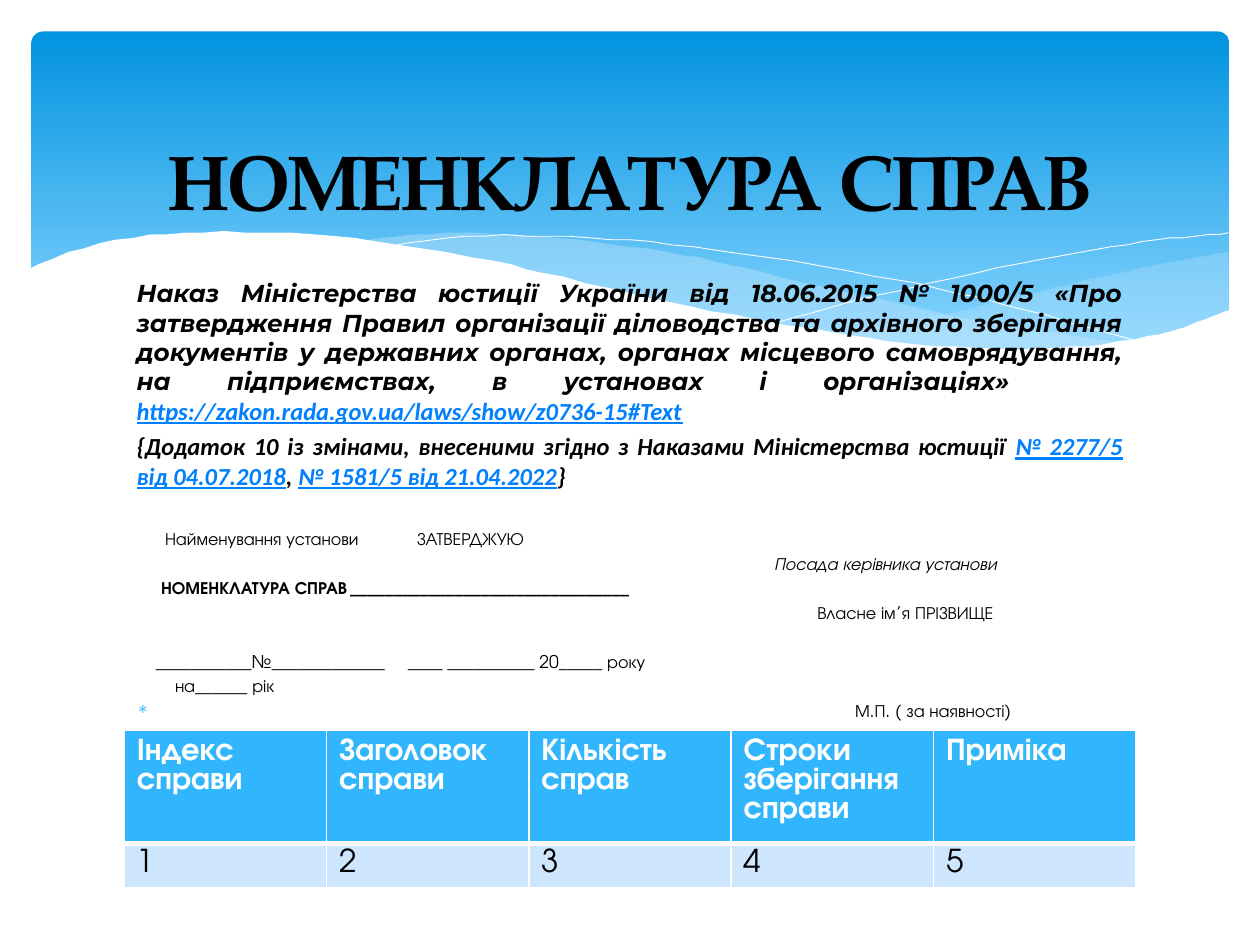
from dataclasses import dataclass

from lxml import etree
from pptx import Presentation
from pptx.dml.color import RGBColor
from pptx.enum import shapes, text
from pptx.oxml import ns
from pptx.util import Pt


@dataclass(frozen=True)
class Theme:
    """Colours, fonts and type sizes of the slide."""
    banner_top: str = "0293E0"
    banner_bottom: str = "83D3FE"
    haze: str = "C6E7FC"
    white: str = "FFFFFF"
    ink: str = "000000"
    link: str = "0080FF"
    accent: str = "31B6FD"
    pale: str = "CEE5FE"
    heading: str = "TeX Gyre Pagella"
    decree: str = "Montserrat"
    reference: str = "Calibri"
    plain: str = "TeX Gyre Adventor"
    title_size: int = 44
    table_size: int = 18
    decree_size: int = 14
    form_size: int = 10


THEME = Theme()

CREST = [(0, 21), (32, 9), (69, 2), (111, 0), (163, 1.5), (211, 7), (265, 16.5), (305, 26),
         (364, 39.5), (418, 50.5), (479, 60.5), (519, 65), (566, 67), (605, 65), (639, 60),
         (667, 52), (687, 44.5)]
RIGHT_HAZE = [
    [(459, 58), (508, 50), (563, 38), (603, 28), (646.5, 18.7), (686, 11.5)],
    [(686, 45.4), (662, 54), (635, 61), (605, 65.5), (569.5, 67.7), (537, 67), (501, 63.4), (459, 58)]]
MIDDLE_HAZE = [
    [(189, 5), (220, 2), (257, 0.7), (302, 3.6), (353.5, 10), (393, 17), (436, 27.5), (492, 40),
     (541.5, 50.5), (586, 58), (626, 64)],
    [(626, 64), (600.5, 67), (564.5, 67.7), (531, 67), (494, 63.4), (451.5, 57.6), (404, 49),
     (365, 40), (307, 27.4), (259, 16.6), (216, 8.6), (189, 5)]]
LONG_STRAND = [(206, 8), (231, 4.3), (272, 2), (321, 3.6), (367, 7), (421, 14.4), (484, 25),
               (531, 35), (582, 48), (636.5, 63.4)]
RISING_STRAND = [(425, 52.6), (484, 36.7), (542, 23), (585, 14.4), (628, 7), (659, 3), (685.5, 0.7)]

DECREE = [
    [("Наказ Міністерства юстиції України від 18.06.2015 № 1000/5 «Про затвердження Правил "
      "організації діловодства та архівного зберігання документів у державних органах, органах "
      "місцевого самоврядування, на підприємствах, в установах і організаціях»   ",
      THEME.decree, False),
     ("https://zakon.rada.gov.ua/laws/show/z0736-15#Text", THEME.reference, True)],
    [("{Додаток 10 із змінами, внесеними згідно з Наказами Міністерства юстиції ",
      THEME.reference, False),
     ("№ 2277/5 від 04.07.2018", THEME.reference, True),
     (", ", THEME.reference, False),
     ("№ 1581/5 від 21.04.2022", THEME.reference, True),
     ("}", THEME.reference, False)]]

FORM_ROWS = [
    (0, [(16.3, "Найменування установи"), (364.3, "ЗАТВЕРДЖУЮ")], ""),
    (2, [(364.3, "Посада керівника установи")], "italic"),
    (2, [(14, "НОМЕНКЛАТУРА СПРАВ"), (396.3, "_" * 32)], "bold"),
    (2, [(389, "Власне ім’я ПРІЗВИЩЕ")], ""),
    (16, [(11, "___________№_____________"), (401, "____ __________ 20_____ року")], ""),
    (2, [(22, "на______ рік")], ""),
    (2, [(410.6, "М.П. ( за наявності)")], "bullet")]

REGISTER = [["Індекс справи", "Заголовок справи", "Кількість справ", "Строки зберігання справи", "Приміка"],
            ["1", "2", "3", "4", "5"]]


def rgb(value):
    """Turn a hex string into a colour."""
    return RGBColor.from_string(value)


def style(run, font, size, colour, bold=False, italic=False, underline=False):
    """Format one run."""
    face = run.font
    face.name, face.size, face.color.rgb = font, Pt(size), rgb(colour)
    face.bold, face.italic, face.underline = bold, italic, underline


def smooth(knots, steps=4):
    """Return points of a Catmull-Rom curve through the knots."""
    padded = [knots[0], *knots, knots[-1]]
    curve = [knots[0]]
    for a, b, c, d in zip(padded, padded[1:], padded[2:], padded[3:]):
        for t in (step / steps for step in range(1, steps + 1)):
            curve.append(tuple(
                0.5 * (2 * q + (r - p) * t + (2 * p - 5 * q + 4 * r - s) * t ** 2
                       + (3 * q - p - 3 * r + s) * t ** 3)
                for p, q, r, s in zip(a, b, c, d)))
    return curve


def add_wave(slide, left, top, outline, fill=None, opacity=100):
    """Draw a filled wave, or an open white strand when no fill is given."""
    points = [(left + x, top + y) for x, y in outline]
    builder = slide.shapes.build_freeform(*points[0], scale=Pt(1))
    builder.add_line_segments(points[1:], close=fill is not None)
    wave = builder.convert_to_shape()
    wave.shadow.inherit = False
    if fill is None:
        wave.fill.background()
        wave.line.color.rgb = rgb(THEME.white)
        wave.line.width = Pt(0.5)
        return
    wave.line.fill.background()
    wave.fill.solid()
    wave.fill.fore_color.rgb = rgb(fill)
    if opacity < 100:
        colour = wave.fill._xPr.find(".//" + ns.qn("a:srgbClr"))
        etree.SubElement(colour, ns.qn("a:alpha"), val=str(opacity * 1000))


def add_banner(slide, left, top, width, height):
    """Draw the gradient banner."""
    banner = slide.shapes.add_shape(
        shapes.MSO_SHAPE.ROUNDED_RECTANGLE, Pt(left), Pt(top), Pt(width), Pt(height))
    banner.adjustments[0] = 0.034
    banner.shadow.inherit = False
    banner.line.fill.background()
    banner.fill.gradient()
    banner.fill.gradient_angle = 270
    stops = zip(banner.fill.gradient_stops, (0, 0.9), (THEME.banner_top, THEME.banner_bottom))
    for stop, position, colour in stops:
        stop.position, stop.color.rgb = position, rgb(colour)


def add_waves(slide, left, top, width, height):
    """Draw the waves over the foot of the banner."""
    for edges, opacity in ((RIGHT_HAZE, 29), (MIDDLE_HAZE, 40)):
        outline = [point for edge in edges for point in smooth(edge)]
        add_wave(slide, left, top, outline, THEME.haze, opacity)
    for strand in (LONG_STRAND, RISING_STRAND):
        add_wave(slide, left, top, smooth(strand))
    add_wave(slide, left, top, smooth(CREST) + [(width, height), (0, height)], THEME.white)


def add_frame(slide, left, top, width, height):
    """Add a wrapping text box without insets and return its text frame."""
    frame = slide.shapes.add_textbox(Pt(left), Pt(top), Pt(width), Pt(height)).text_frame
    frame.word_wrap = True
    frame.margin_left = frame.margin_right = frame.margin_top = frame.margin_bottom = 0
    return frame


def add_title(slide, left, top, width, height):
    """Place the centred title."""
    frame = add_frame(slide, left, top, width, height)
    frame.vertical_anchor = text.MSO_ANCHOR.MIDDLE
    title = frame.paragraphs[0]
    title.text = "НОМЕНКЛАТУРА СПРАВ"
    title.alignment = text.PP_ALIGN.CENTER
    style(title.runs[0], THEME.heading, THEME.title_size, THEME.ink, bold=True)


def add_decree(slide, left, top, width, height):
    """Place the justified legal reference."""
    frame = add_frame(slide, left, top, width, height)
    for index, parts in enumerate(DECREE):
        clause = frame.add_paragraph() if index else frame.paragraphs[0]
        clause.alignment = text.PP_ALIGN.JUSTIFY
        clause.space_before = Pt(3.4 * index)
        for words, font, linked in parts:
            run = clause.add_run()
            run.text = words
            style(run, font, THEME.decree_size, THEME.link if linked else THEME.ink, True, True, linked)


def add_form(slide, left, top, width, height):
    """Place the form heading, with its right column on tab stops."""
    frame = add_frame(slide, left, top, width, height)
    for index, (gap, entries, look) in enumerate(FORM_ROWS):
        row = frame.add_paragraph() if index else frame.paragraphs[0]
        row.text = "\t".join(words for _, words in entries)
        row.space_before, row.line_spacing = Pt(gap), Pt(12)
        properties = row._p.get_or_add_pPr()
        start = Pt(entries[0][0])
        properties.set("marL", str(start))
        properties.set("indent", str(-start if look == "bullet" else 0))
        if look == "bullet":
            colour = etree.SubElement(properties, ns.qn("a:buClr"))
            etree.SubElement(colour, ns.qn("a:srgbClr"), val=THEME.accent)
            etree.SubElement(properties, ns.qn("a:buChar"), char="∗")
        if len(entries) > 1:
            tabs = etree.SubElement(properties, ns.qn("a:tabLst"))
            etree.SubElement(tabs, ns.qn("a:tab"), pos=str(Pt(entries[1][0])), algn="l")
        for run in row.runs:
            style(run, THEME.plain, THEME.form_size, THEME.ink, look == "bold", look == "italic")


def add_borders(cell, widths):
    """Give a cell white borders of the widths for left, right, top and bottom."""
    properties = cell._tc.get_or_add_tcPr()
    for index, (side, width) in enumerate(zip("LRTB", widths)):
        border = etree.Element(ns.qn("a:ln" + side), w=str(Pt(width)))
        fill = etree.SubElement(border, ns.qn("a:solidFill"))
        etree.SubElement(fill, ns.qn("a:srgbClr"), val=THEME.white)
        properties.insert(index, border)


def add_register(slide, left, top, width, height):
    """Place the table of case columns."""
    register = slide.shapes.add_table(
        len(REGISTER), len(REGISTER[0]), Pt(left), Pt(top), Pt(width), Pt(height)).table
    for column in register.columns:
        column.width = Pt(width / len(REGISTER[0]))
    looks = ((64.5, THEME.accent, THEME.white, (1, 1, 1, 3)), (25.5, THEME.pale, THEME.ink, (1, 1, 3, 1)))
    for row, labels, (depth, fill, ink, borders) in zip(register.rows, REGISTER, looks):
        row.height = Pt(depth)
        for cell, label in zip(row.cells, labels):
            cell.fill.solid()
            cell.fill.fore_color.rgb = rgb(fill)
            add_borders(cell, borders)
            cell.text_frame.text = label
            heading = cell.text_frame.paragraphs[0]
            heading.line_spacing = Pt(16.6)
            style(heading.runs[0], THEME.plain, THEME.table_size, ink, bold=ink == THEME.white)


def main():
    """Build the slide and save it."""
    deck = Presentation()
    deck.slide_width, deck.slide_height = Pt(720), Pt(540)
    slide = deck.slides.add_slide(deck.slide_layouts[6])
    add_banner(slide, 18, 18, 684.5, 194.5)
    add_waves(slide, 16.5, 132.5, 687, 104.5)
    add_register(slide, 71, 417.5, 578, 90)
    add_title(slide, 36, 26.5, 648, 152.5)
    add_decree(slide, 78, 159, 563.5, 122)
    add_form(slide, 78, 302, 563.5, 112)
    deck.save("out.pptx")


if __name__ == "__main__":
    main()
